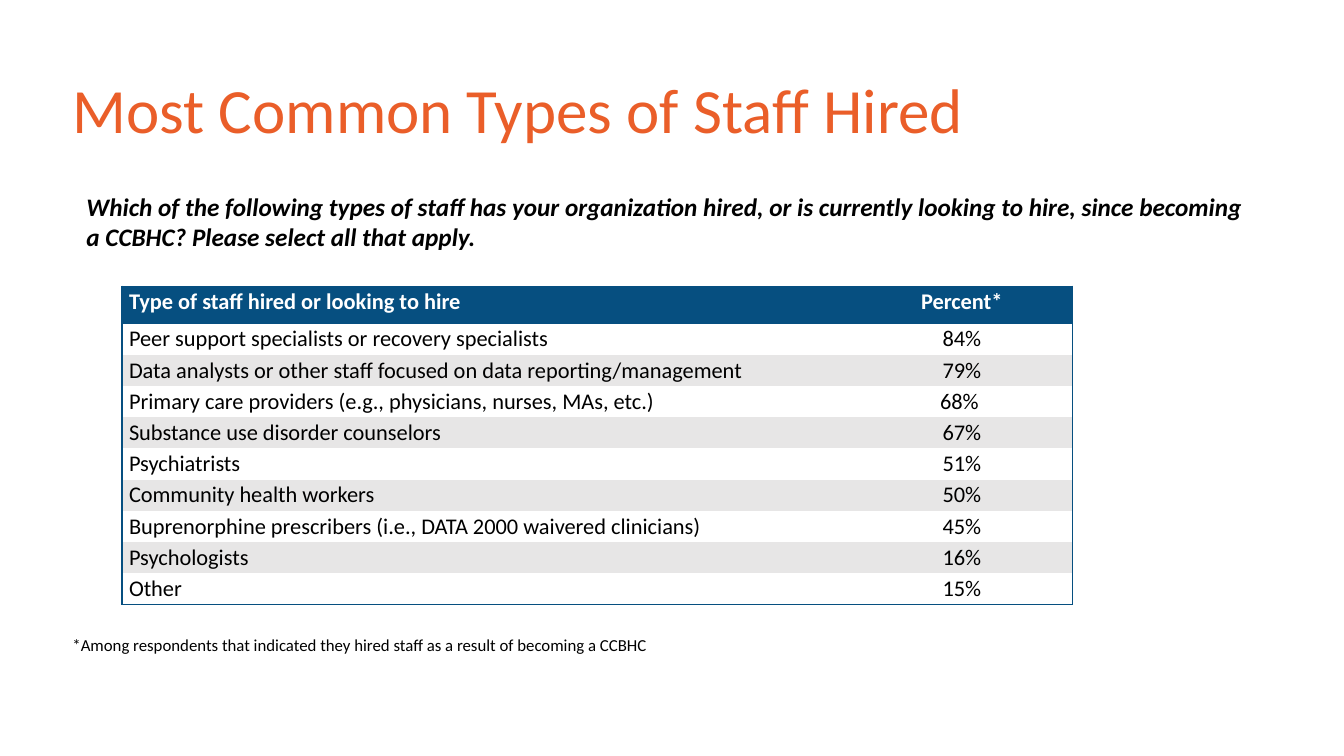
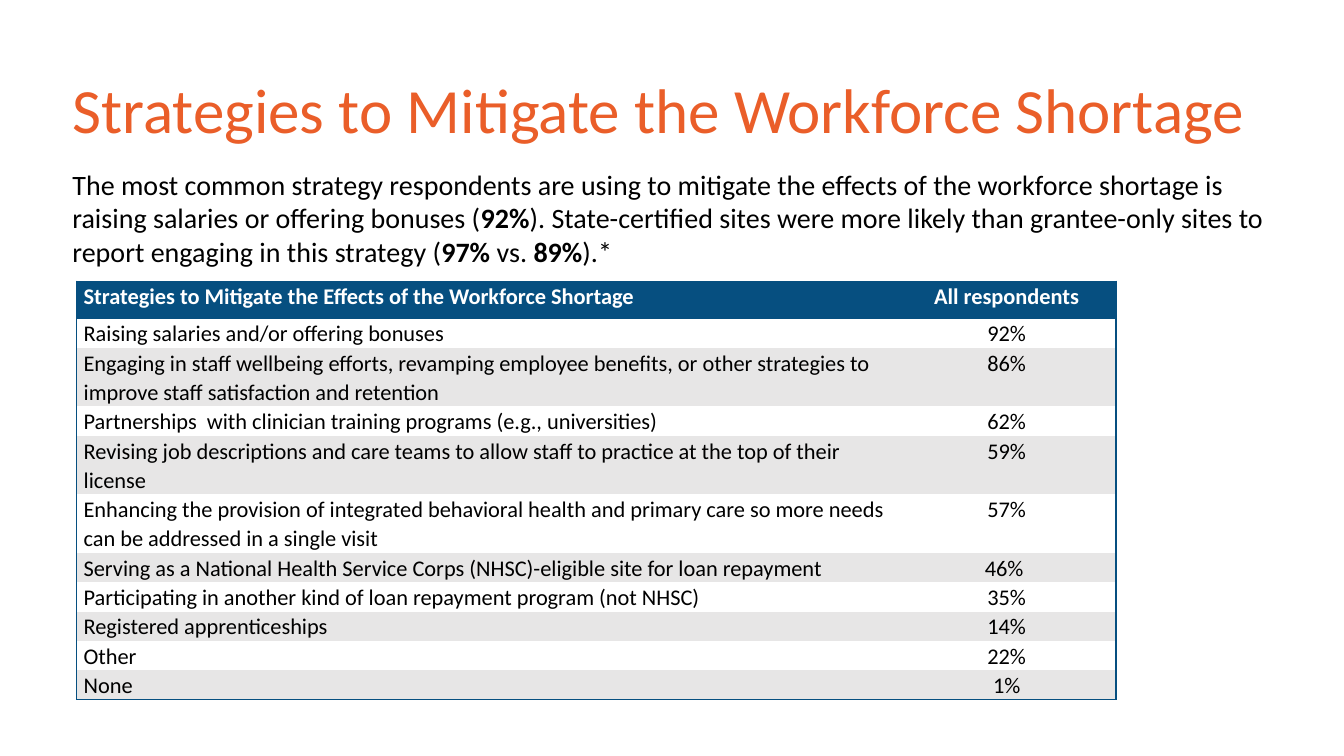
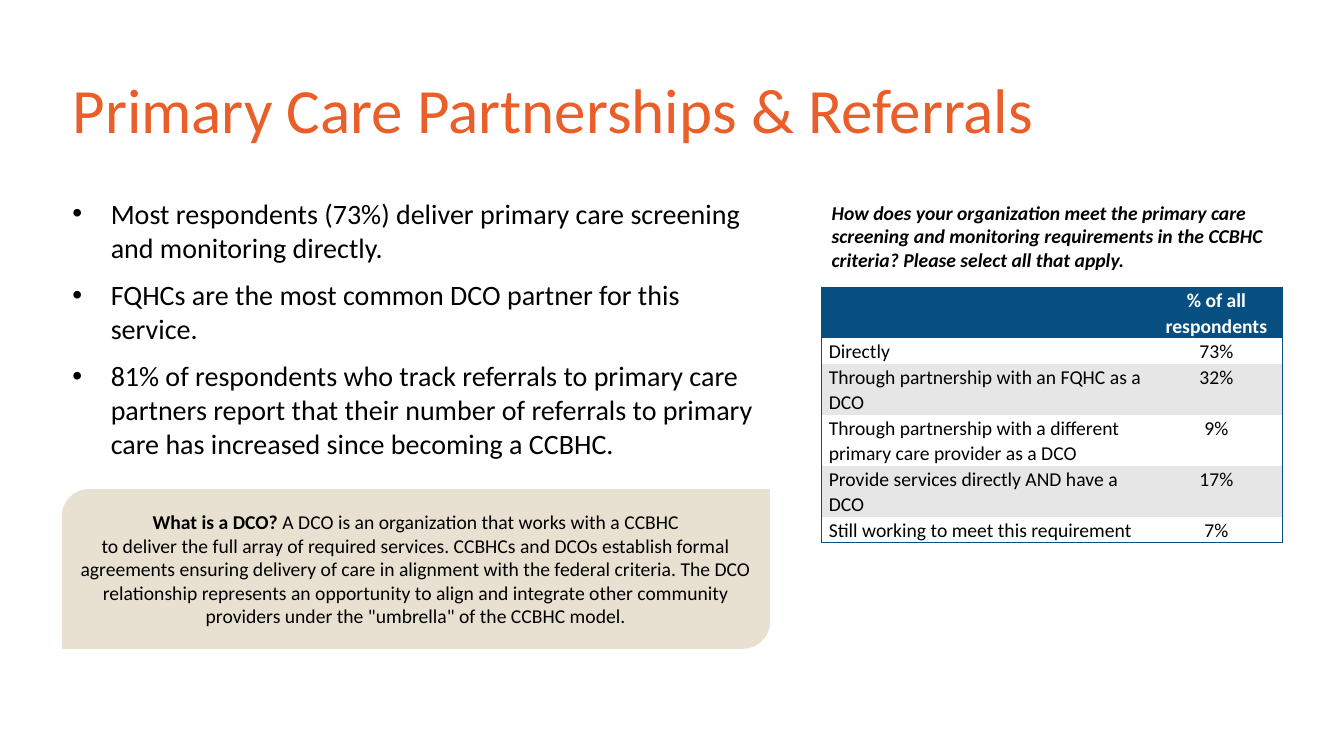
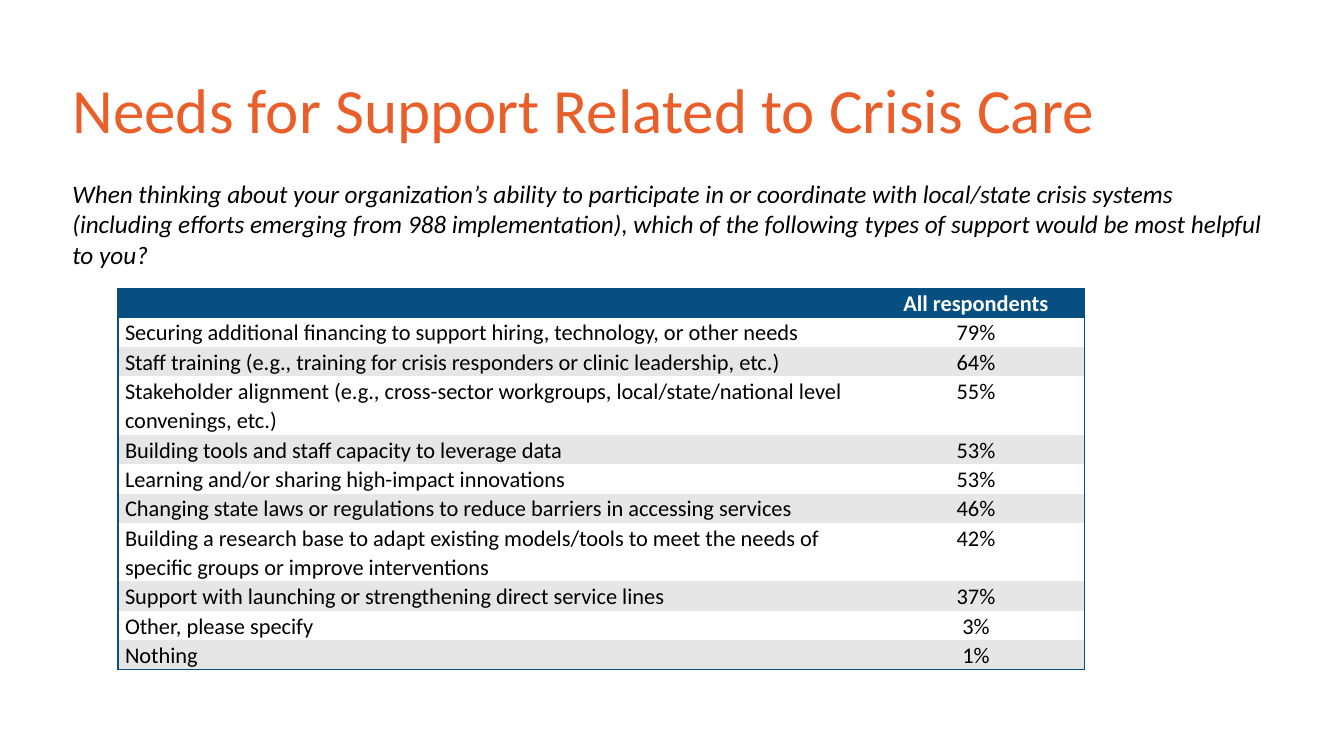
"""Build four slides of CCBHC survey findings."""
from lxml.etree import SubElement
from pptx import Presentation
from pptx.dml.color import RGBColor
from pptx.enum.shapes import MSO_SHAPE as SHAPE
from pptx.enum.text import MSO_ANCHOR as ANCHOR, MSO_AUTO_SIZE as AUTO, PP_ALIGN as ALIGN
from pptx.oxml.ns import qn
from pptx.util import Inches, Pt

FONT = "Calibri"
ORANGE = RGBColor(0xEA, 0x5E, 0x29)
BLUE = RGBColor(0x06, 0x4F, 0x80)
GRAY = RGBColor(0xE7, 0xE6, 0xE6)
SAND = RGBColor(0xE8, 0xE0, 0xD1)
WHITE = RGBColor(0xFF, 0xFF, 0xFF)
BLACK = RGBColor(0, 0, 0)
NO_GRID = "{2D5ABB26-0587-4C30-8999-92F81FD0307C}"
LEFT, WIDTH = 0.62, 12.1


def put_text(tf, text, size=16, color=BLACK, bold=False, italic=False,
             align=ALIGN.LEFT, spacing=1.0, before=0, bullet=False):
    """Add a paragraph; bold switches at each | in the text."""
    p = tf.add_paragraph() if tf.text else tf.paragraphs[0]
    if bullet:
        pPr = p._p.get_or_add_pPr()
        pPr.set("marL", str(Inches(0.38)))
        pPr.set("indent", str(-Inches(0.38)))
        SubElement(pPr, qn("a:buFont")).set("typeface", "Arial")
        SubElement(pPr, qn("a:buChar")).set("char", "•")
    p.alignment = align
    p.line_spacing = spacing
    p.space_before = Pt(before)
    if not text:
        p._p.get_or_add_endParaRPr().set("sz", str(size * 100))
        return
    for i, part in enumerate(text.split("|")):
        if part:
            r = p.add_run()
            r.text = part
            r.font.name = FONT
            r.font.size = Pt(size)
            r.font.color.rgb = color
            r.font.bold = bold != (i % 2 == 1)
            r.font.italic = italic


titles = [
    "Most Common Types of Staff Hired",
    "Strategies to Mitigate the Workforce Shortage",
    "Primary Care Partnerships & Referrals",
    "Needs for Support Related to Crisis Care",
]

tables = [
    dict(at=(1.21, 2.84), cols=(7.23, 2.2), size=16, head=0.37, row=0.31, wrapped=(), rows=[
        ("Type of staff hired or looking to hire", "Percent*"),
        ("Peer support specialists or recovery specialists", "84%"),
        ("Data analysts or other staff focused on data reporting/management", "79%"),
        ("Primary care providers (e.g., physicians, nurses, MAs, etc.)", "68% "),
        ("Substance use disorder counselors", "67%"),
        ("Psychiatrists", "51%"),
        ("Community health workers", "50%"),
        ("Buprenorphine prescribers (i.e., DATA 2000 waivered clinicians)", "45%"),
        ("Psychologists", "16%"),
        ("Other", "15%"),
    ]),
    dict(at=(0.76, 2.79), cols=(8.14, 2.17), size=16, head=0.37, row=0.29, wrapped=(2, 4, 5), rows=[
        ("Strategies to Mitigate the Effects of the Workforce Shortage", "All respondents"),
        ("Raising salaries and/or offering bonuses", "92%"),
        ("Engaging in staff wellbeing efforts, revamping employee benefits, or other "
         "strategies to improve staff satisfaction and retention", "86%"),
        ("Partnerships  with clinician training programs (e.g., universities)", "62%"),
        ("Revising job descriptions and care teams to allow staff to practice at the top "
         "of their license", "59%"),
        ("Enhancing the provision of integrated behavioral health and primary care so more "
         "needs can be addressed in a single visit", "57%"),
        ("Serving as a National Health Service Corps (NHSC)-eligible site for loan repayment", "46% "),
        ("Participating in another kind of loan repayment program (not NHSC)", "35%"),
        ("Registered apprenticeships", "14%"),
        ("Other", "22%"),
        ("None", "1%"),
    ]),
    dict(at=(8.15, 2.85), cols=(3.26, 1.31), size=14, head=0.5, row=0.25, wrapped=(2, 3, 4), rows=[
        ("", "% of all respondents"),
        ("Directly", "73%"),
        ("Through partnership with an FQHC as a DCO", "32%"),
        ("Through partnership with a different primary care provider as a DCO", "9%"),
        ("Provide services directly AND have a DCO", "17%"),
        ("Still working to meet this requirement", "7%"),
    ]),
    dict(at=(1.17, 2.86), cols=(7.43, 2.16), size=16, head=0.29, row=0.29, wrapped=(3, 7), rows=[
        ("", "All respondents"),
        ("Securing additional financing to support hiring, technology, or other needs", "79%"),
        ("Staff training (e.g., training for crisis responders or clinic leadership, etc.)", "64%"),
        ("Stakeholder alignment (e.g., cross-sector workgroups, local/state/national level "
         "convenings, etc.)", "55%"),
        ("Building tools and staff capacity to leverage data", "53%"),
        ("Learning and/or sharing high-impact innovations", "53%"),
        ("Changing state laws or regulations to reduce barriers in accessing services", "46%"),
        ("Building a research base to adapt existing models/tools to meet the needs of "
         "specific groups or improve interventions", "42%"),
        ("Support with launching or strengthening direct service lines", "37%"),
        ("Other, please specify", "3%"),
        ("Nothing", "1%"),
    ]),
]

texts = [
    (0, (0.76, 1.85, 11.77, 0.71), dict(size=18, bold=True, italic=True), [
        "Which of the following types of staff has your organization hired, or is currently "
        "looking to hire, since becoming a CCBHC? Please select all that apply."]),
    (0, (LEFT, 6.25, 9.32, 0.3), dict(size=12), [
        "*Among respondents that indicated they hired staff as a result of becoming a CCBHC"]),
    (1, (LEFT, 1.61, WIDTH, 1.09), dict(size=20), [
        "The most common strategy respondents are using to mitigate the effects of the "
        "workforce shortage is raising salaries or offering bonuses (|92%|). State-certified "
        "sites were more likely than grantee-only sites to report engaging in this strategy "
        "(|97%| vs. |89%|).*"]),
    (2, (LEFT, 1.9, 7.01, 2.85), dict(size=20, bullet=True), [
        "Most respondents (73%) deliver primary care screening and monitoring directly.",
        "FQHCs are the most common DCO partner for this service.",
        "81% of respondents who track referrals to primary care partners report that their "
        "number of referrals to primary care has increased since becoming a CCBHC."]),
    (2, (8.15, 1.94, 4.79, 0.81), dict(size=14, bold=True, italic=True), [
        "How does your organization meet the primary care screening and monitoring "
        "requirements in the CCBHC criteria? Please select all that apply."]),
    (3, (LEFT, 1.72, WIDTH, 1.05), dict(size=18, italic=True), [
        "When thinking about your organization’s ability to participate in or coordinate with "
        "local/state crisis systems (including efforts emerging from 988 implementation), "
        "which of the following types of support would be most helpful to you?"]),
]

prs = Presentation()
prs.slide_width, prs.slide_height = Inches(13.33), Inches(7.5)

for title, spec_table in zip(titles, tables):
    s = prs.slides.add_slide(prs.slide_layouts[5])
    sp = s.shapes.title
    sp.left, sp.top, sp.width, sp.height = [Inches(v) for v in (LEFT, 0.4, WIDTH, 1.45)]
    sp.text_frame.auto_size = AUTO.NONE
    sp.text_frame.vertical_anchor = ANCHOR.MIDDLE
    put_text(sp.text_frame, title, size=45, color=ORANGE, spacing=0.9)

    rows, cols = spec_table["rows"], spec_table["cols"]
    heights = [spec_table["row"] * (2 if i in spec_table["wrapped"] else 1) for i in range(len(rows))]
    heights[0] = spec_table["head"]
    x, y = spec_table["at"]
    tbl = s.shapes.add_table(len(rows), len(cols), Inches(x), Inches(y),
                             Inches(sum(cols)), Inches(sum(heights))).table
    tbl._tbl.tblPr.find(qn("a:tableStyleId")).text = NO_GRID
    tbl.horz_banding = False
    for col, width in zip(tbl.columns, cols):
        col.width = Inches(width)
    for i, values in enumerate(rows):
        tbl.rows[i].height = Inches(heights[i])
        for j, value in enumerate(values):
            cell = tbl.cell(i, j)
            cell.margin_left = cell.margin_right = Inches(0.07)
            cell.margin_top = cell.margin_bottom = 0
            put_text(cell.text_frame, value, size=spec_table["size"], bold=i == 0,
                     color=BLACK if i else WHITE, spacing=1.07,
                     align=ALIGN.CENTER if j else ALIGN.LEFT)
            edges = [("a:lnL", j == 0), ("a:lnR", j == len(cols) - 1),
                     ("a:lnT", i == 0), ("a:lnB", i == len(rows) - 1)]
            for tag, outer in edges:
                if outer:
                    ln = SubElement(cell._tc.get_or_add_tcPr(), qn(tag), w=str(Pt(1)))
                    SubElement(SubElement(ln, qn("a:solidFill")), qn("a:srgbClr"), val=str(BLUE))
            cell.fill.solid()
            cell.fill.fore_color.rgb = BLUE if i == 0 else WHITE if i % 2 else GRAY

for index, box, style, paragraphs in texts:
    tf = prs.slides[index].shapes.add_textbox(*[Inches(v) for v in box]).text_frame
    tf.word_wrap = True
    for i, text in enumerate(paragraphs):
        put_text(tf, text, before=10 if i else 0, **style)

callout = prs.slides[2].shapes.add_shape(
    SHAPE.ROUND_2_DIAG_RECTANGLE, Inches(LEFT), Inches(4.86), Inches(7.01), Inches(1.57))
callout.shadow.inherit = False
callout.fill.solid()
callout.fill.fore_color.rgb = SAND
callout.line.color.rgb = SAND
callout.line.width = Pt(1)
tf = callout.text_frame
tf.word_wrap = True
tf.vertical_anchor = ANCHOR.MIDDLE
for text in [
    "|What is a DCO? |A DCO is an organization that works with a CCBHC",
    "to deliver the full array of required services. CCBHCs and DCOs establish formal "
    "agreements ensuring delivery of care in alignment with the federal criteria. The DCO "
    "relationship represents an opportunity to align and integrate other community "
    "providers under the \"umbrella\" of the CCBHC model.",
]:
    put_text(tf, text, size=14, align=ALIGN.CENTER)

prs.save("out.pptx")
